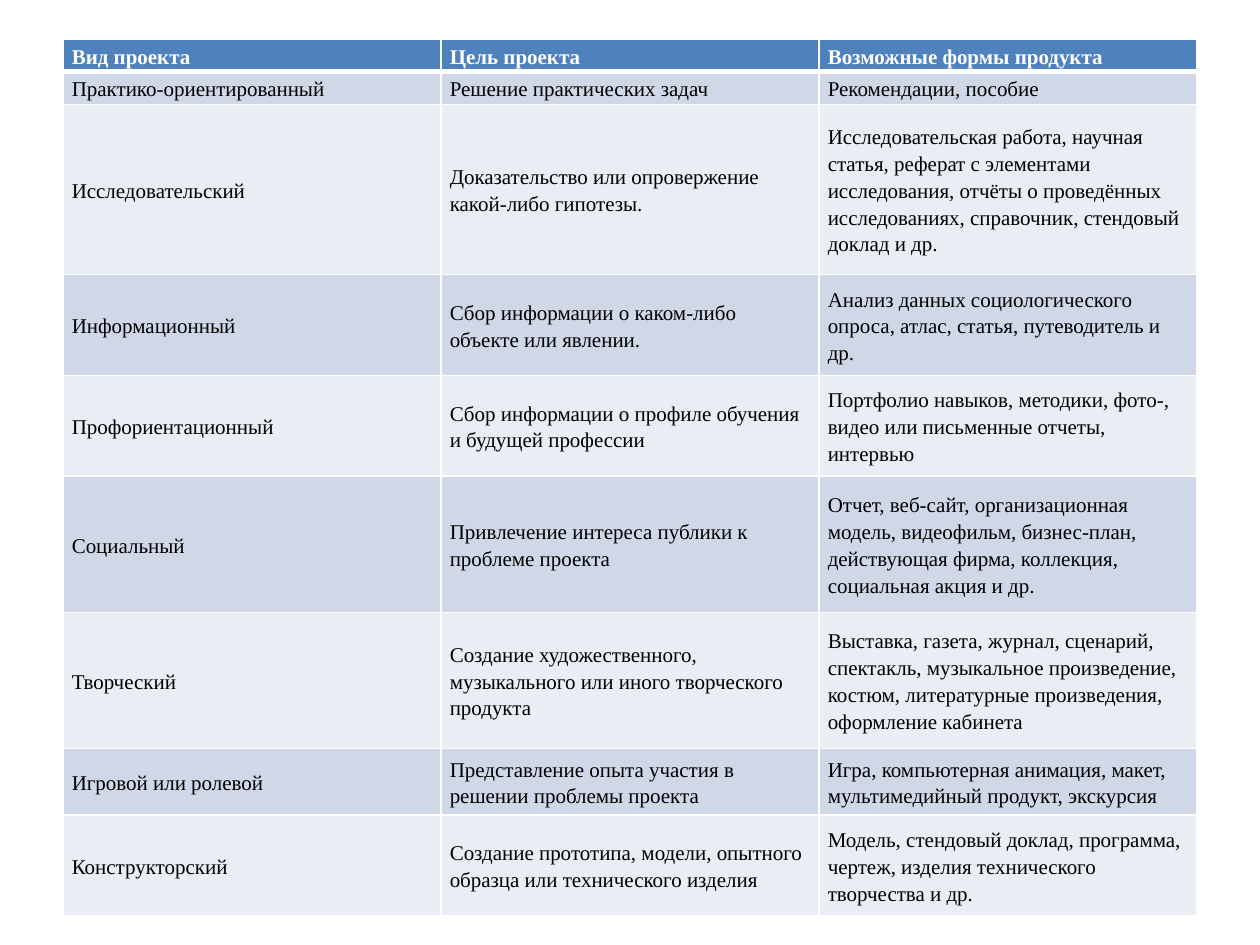
from dataclasses import dataclass

from lxml.etree import SubElement
from pptx import Presentation
from pptx.dml.color import RGBColor
from pptx.enum.text import MSO_ANCHOR
from pptx.oxml.ns import qn
from pptx.util import Inches, Pt


@dataclass(frozen=True)
class Theme:
    font: str = "Times New Roman"
    size: int = 12
    header: str = "4F81BD"
    header_text: str = "FFFFFF"
    text: str = "000000"
    bands: tuple = ("E9EDF4", "D0D8E8")
    border: str = "FFFFFF"
    thin: int = 1
    thick: int = 3


THEME = Theme()

PROJECT_TYPES = [
    ("Вид проекта", "Цель проекта", "Возможные формы продукта"),
    ("Практико-ориентированный", "Решение практических задач", "Рекомендации, пособие"),
    ("Исследовательский", "Доказательство или опровержение какой-либо гипотезы.",
     "Исследовательская работа, научная статья, реферат с элементами исследования, "
     "отчёты о проведённых исследованиях, справочник, стендовый доклад и др."),
    ("Информационный", "Сбор информации о каком-либо объекте или явлении.",
     "Анализ данных социологического опроса, атлас, статья, путеводитель и др."),
    ("Профориентационный", "Сбор информации о профиле обучения и будущей профессии",
     "Портфолио навыков, методики, фото-, видео или письменные отчеты, интервью"),
    ("Социальный", "Привлечение интереса публики к проблеме проекта",
     "Отчет, веб-сайт, организационная модель, видеофильм, бизнес-план, "
     "действующая фирма, коллекция, социальная акция и др."),
    ("Творческий", "Создание художественного, музыкального или иного творческого продукта",
     "Выставка, газета, журнал, сценарий, спектакль, музыкальное произведение, "
     "костюм, литературные произведения, оформление кабинета"),
    ("Игровой или ролевой", "Представление опыта участия в решении проблемы проекта",
     "Игра, компьютерная анимация, макет, мультимедийный продукт, экскурсия"),
    ("Конструкторский", "Создание прототипа, модели, опытного образца или технического изделия",
     "Модель, стендовый доклад, программа, чертеж, изделия технического творчества и др."),
]
ROW_HEIGHTS = [0.26, 0.26, 1.35, 0.8, 0.8, 1.08, 1.08, 0.53, 0.8]
COLUMN_WIDTH = 3


def set_borders(cell, top, bottom):
    """Draw all four cell borders; top and bottom widths are in points."""
    properties = cell._tc.get_or_add_tcPr()
    widths = {"lnL": THEME.thin, "lnR": THEME.thin, "lnT": top, "lnB": bottom}
    for side, width in widths.items():
        line = SubElement(properties, qn(f"a:{side}"), w=str(Pt(width)))
        SubElement(SubElement(line, qn("a:solidFill")), qn("a:srgbClr"), val=THEME.border)


presentation = Presentation()
presentation.slide_width = Inches(10)
presentation.slide_height = Inches(7.5)
slide = presentation.slides.add_slide(presentation.slide_layouts[6])

column_count = len(PROJECT_TYPES[0])
table = slide.shapes.add_table(
    len(PROJECT_TYPES), column_count, Inches(0.5), Inches(0.31),
    Inches(COLUMN_WIDTH * column_count), Inches(sum(ROW_HEIGHTS))).table
for column in table.columns:
    column.width = Inches(COLUMN_WIDTH)

for row_index, (texts, height) in enumerate(zip(PROJECT_TYPES, ROW_HEIGHTS)):
    table.rows[row_index].height = Inches(height)
    is_header = row_index == 0
    fill_color = THEME.header if is_header else THEME.bands[row_index % 2]
    text_color = THEME.header_text if is_header else THEME.text
    for column_index, text in enumerate(texts):
        cell = table.cell(row_index, column_index)
        cell.text = text
        cell.vertical_anchor = MSO_ANCHOR.MIDDLE
        cell.margin_left = cell.margin_right = Inches(0.07)
        cell.margin_top = cell.margin_bottom = 0
        set_borders(cell,
                    top=THEME.thick if row_index == 1 else THEME.thin,
                    bottom=THEME.thick if is_header else THEME.thin)
        cell.fill.solid()
        cell.fill.fore_color.rgb = RGBColor.from_string(fill_color)
        paragraph = cell.text_frame.paragraphs[0]
        paragraph.line_spacing = 1.15
        paragraph.font.name = THEME.font
        paragraph.font.size = Pt(THEME.size)
        paragraph.font.bold = is_header
        paragraph.font.color.rgb = RGBColor.from_string(text_color)

presentation.save("out.pptx")
